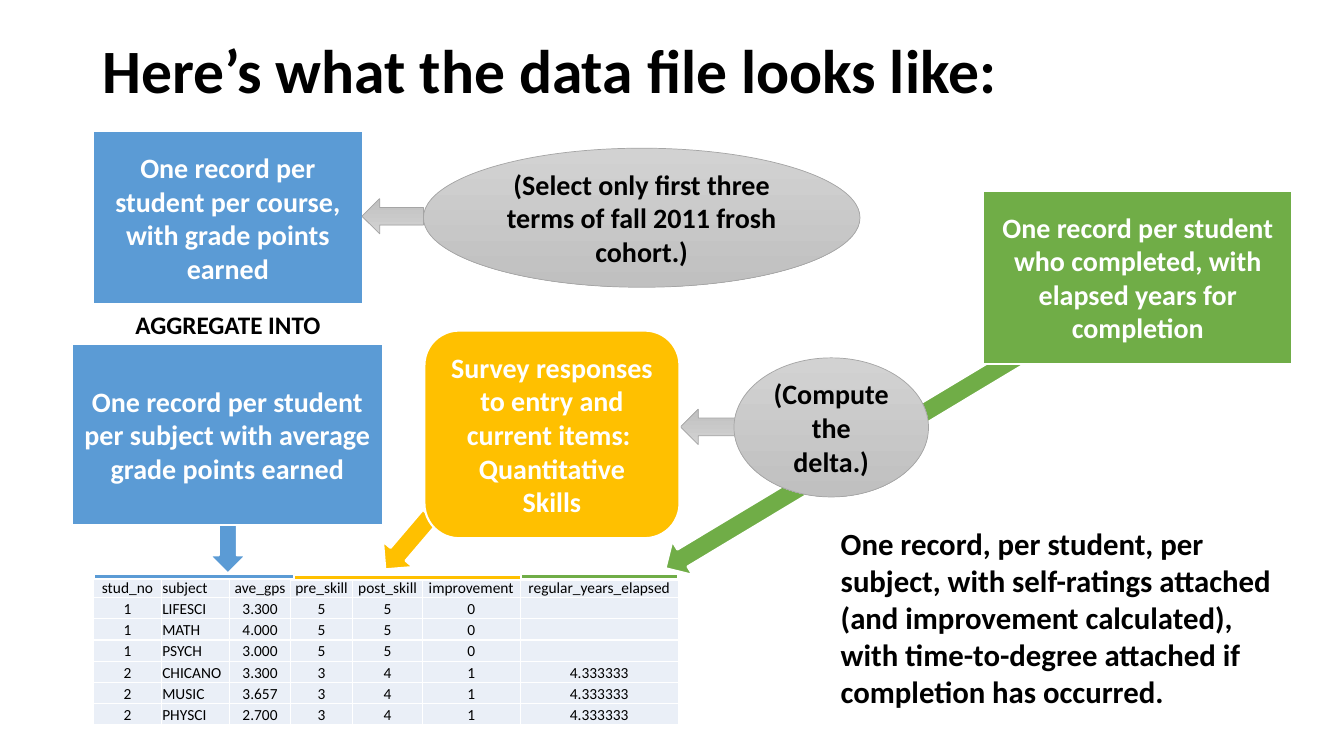
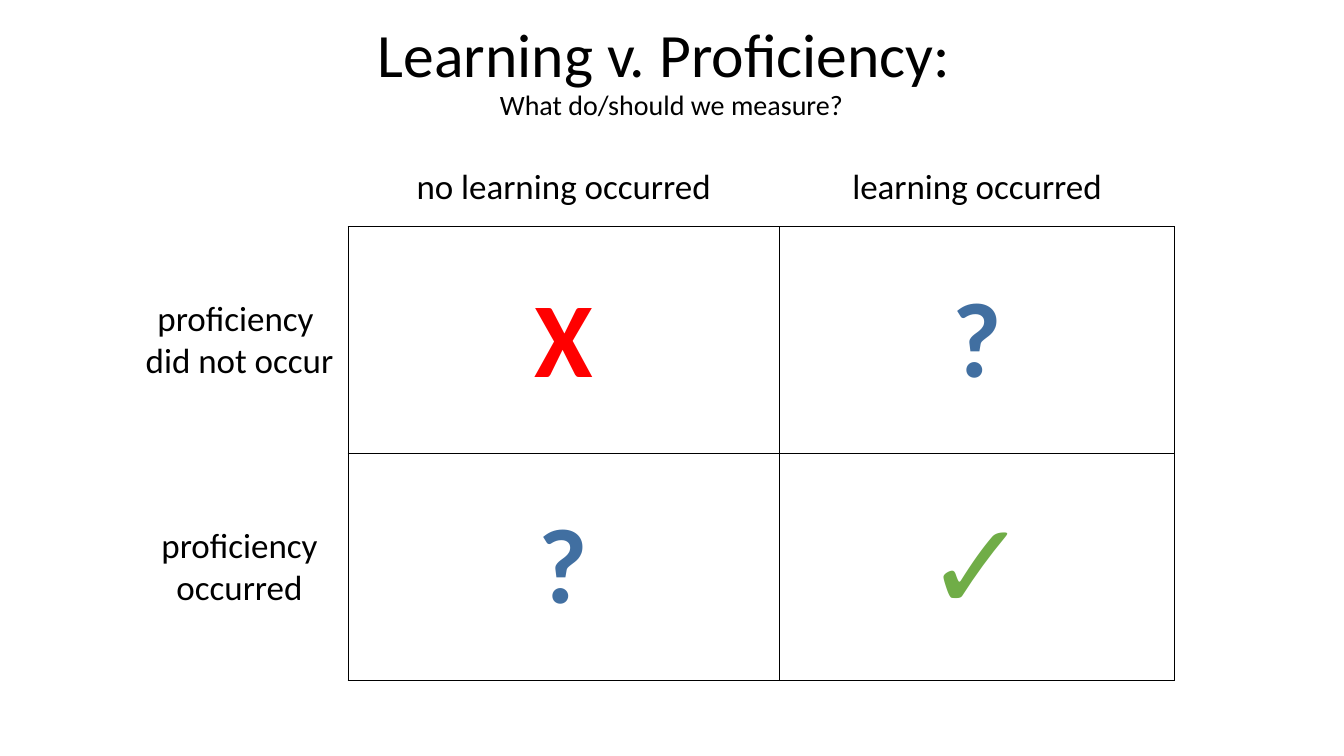
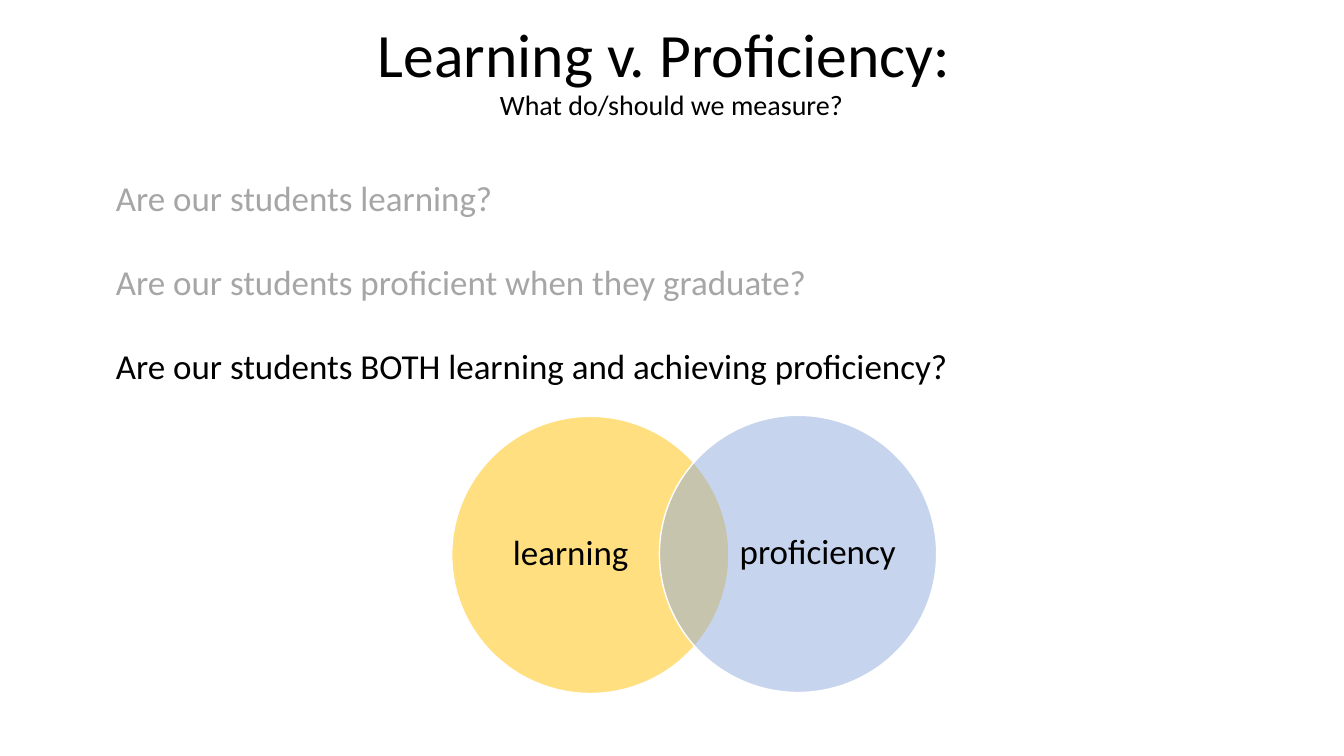
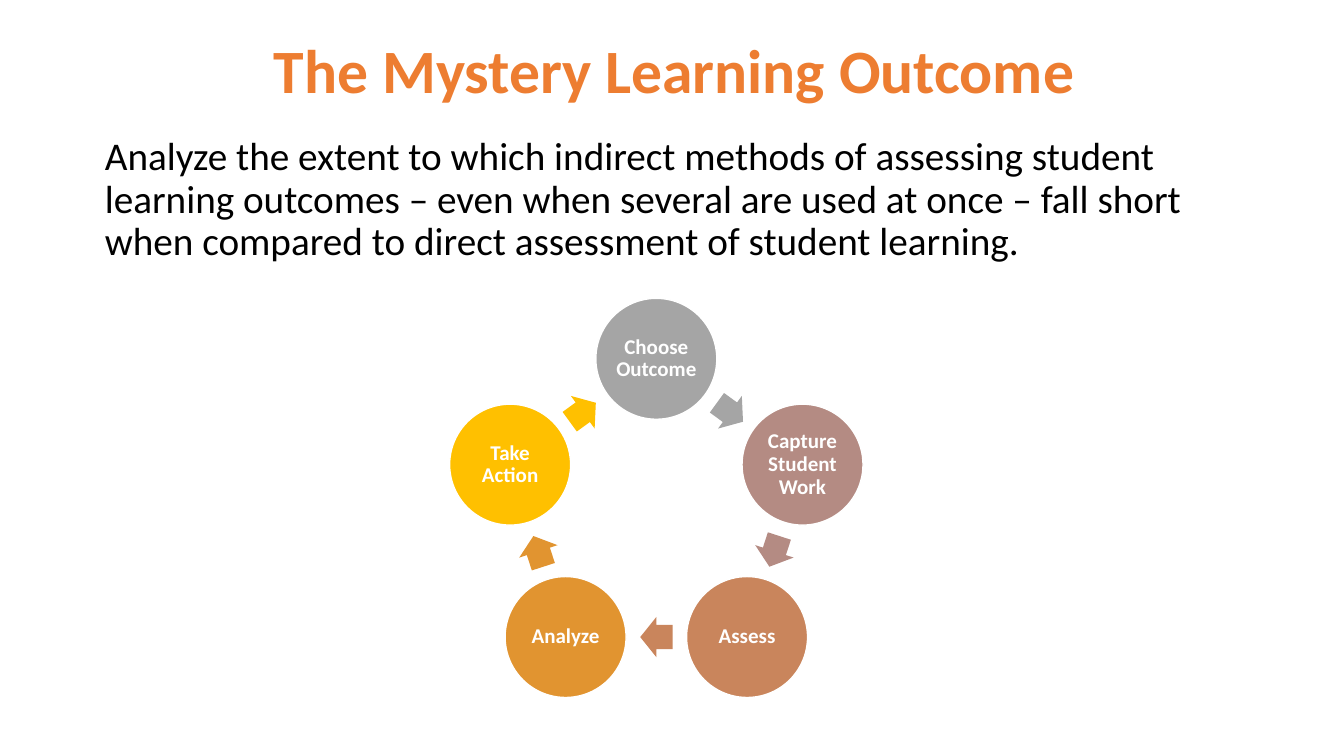
import math
from dataclasses import dataclass

from lxml import etree
from pptx import Presentation
from pptx import util as u
from pptx.dml.color import RGBColor
from pptx.enum import shapes, text
from pptx.oxml.ns import qn

PX = 9144  # one px is a hundredth of an inch
SHAPE = shapes.MSO_SHAPE
ALIGN = {"l": text.PP_ALIGN.LEFT, "c": text.PP_ALIGN.CENTER}
ANCHOR = {"t": text.MSO_ANCHOR.TOP, "m": text.MSO_ANCHOR.MIDDLE,
          "b": text.MSO_ANCHOR.BOTTOM}
TITLE_ONLY, TITLE_AND_BODY = 5, 1


@dataclass(frozen=True)
class Theme:
    font: str = "Calibri"
    symbol_font: str = "Arial"
    # colours
    ink: str = "000000"
    paper: str = "FFFFFF"
    blue: str = "5B9BD5"
    gold: str = "FFC000"
    green: str = "70AD47"
    orange: str = "ED7D31"
    red: str = "FF0000"
    navy: str = "416FA1"
    pale_blue: str = "8FAADC"
    cell: str = "EAEFF7"
    muted: str = "A6A6A6"
    grey: str = "A5A5A5"
    steel: tuple = ("D2D2D2", "C0C0C0")
    cycle: tuple = ("A5A5A5", "B48B83", "C9855C", "E19430", "FFC000")
    # type sizes
    title: int = 44
    body: int = 28
    question: int = 25
    summary: int = 22
    box: int = 20
    caption: int = 18
    step: int = 15
    data: int = 11
    mark: int = 76
    check: int = 88


T = Theme()


# Basics

def px(*lengths):
    return [u.Emu(round(length * PX)) for length in lengths]


def rgb(colour):
    return RGBColor.from_string(colour)


def style(run, size, color, bold, font):
    run.font.size, run.font.bold, run.font.name = u.Pt(size), bold, font
    run.font.color.rgb = rgb(color)


def write(frame, words, size=T.box, color=T.ink, bold=False, font=T.font,
          align="l", anchor=None, inset=None, spacing=1.0, after=0):
    """Fill a text frame; each line of words becomes a paragraph."""
    if anchor:
        frame.word_wrap = True
        frame.auto_size = text.MSO_AUTO_SIZE.NONE
        frame.vertical_anchor = ANCHOR[anchor]
    if inset is not None:
        frame.margin_left, frame.margin_top, frame.margin_right, frame.margin_bottom = px(*[inset] * 4)
    for i, line in enumerate(words.split("\n")):
        para = frame.add_paragraph() if i else frame.paragraphs[0]
        para.alignment = ALIGN[align]
        para.line_spacing = spacing
        para.space_before, para.space_after = u.Pt(0), u.Pt(after)
        if line:
            run = para.add_run()
            run.text = line
            style(run, size, color, bold, font)
        else:
            etree.SubElement(para._p, qn("a:endParaRPr"), sz=str(size * 100))


def place(shape, box):
    shape.left, shape.top, shape.width, shape.height = px(*box)


# Elements

def titled_slide(deck, words, box, layout=TITLE_ONLY, subtitle=None, **fmt):
    slide = deck.slides.add_slide(deck.slide_layouts[layout])
    heading = slide.shapes.title
    place(heading, box)
    write(heading.text_frame, words, size=T.title, anchor="m", spacing=0.9, **fmt)
    if subtitle:
        para = heading.text_frame.paragraphs[0]
        para.add_line_break()
        run = para.add_run()
        run.text = subtitle
        style(run, T.box, T.ink, False, T.font)
    return slide


def body(slide, words, box, **fmt):
    """Put unbulleted paragraphs in the body placeholder."""
    holder = slide.placeholders[1]
    place(holder, box)
    write(holder.text_frame, words, anchor="t", **fmt)
    for para in holder.text_frame.paragraphs:
        props = para._p.get_or_add_pPr()
        props.set("marL", "0")
        props.set("indent", "0")
        etree.SubElement(props, qn("a:buNone"))
    return holder.text_frame


def label(slide, words, box, **fmt):
    write(slide.shapes.add_textbox(*px(*box)).text_frame, words,
          **{"anchor": "t", **fmt})


def figure(slide, kind, box, fill, line=T.paper, width=1.5, turn=0, alpha=None,
           words=None, **fmt):
    """Draw a preset shape; a pair of colours gives a top-down gradient."""
    shape = slide.shapes.add_shape(kind, *px(*box))
    shape.shadow.inherit = False
    shape.rotation = turn
    if isinstance(fill, tuple):
        shape.fill.gradient()
        shape.fill.gradient_angle = 270
        for stop, colour in zip(shape.fill.gradient_stops, fill):
            stop.color.rgb = rgb(colour)
    else:
        shape.fill.solid()
        shape.fill.fore_color.rgb = rgb(fill)
    if alpha is not None:
        colour = shape._element.spPr.find(qn("a:solidFill")).find(qn("a:srgbClr"))
        etree.SubElement(colour, qn("a:alpha"), val=str(alpha * 1000))
    if line:
        shape.line.color.rgb = rgb(line)
        shape.line.width = u.Pt(width)
    else:
        shape.line.fill.background()
    if words:
        write(shape.text_frame, words, **{"bold": True, "align": "c", "anchor": "m", **fmt})
    return shape


def steel(slide, kind, box, **options):
    figure(slide, kind, box, T.steel, line=T.grey, width=0.5, **options)


def table(slide, left, top, columns, rows):
    frame = slide.shapes.add_table(len(rows), len(columns),
                                   *px(left, top, sum(columns), sum(rows)))
    grid = frame.table
    grid.first_row = grid.horz_banding = False
    for column, size in zip(grid.columns, px(*columns)):
        column.width = size
    for row, size in zip(grid.rows, px(*rows)):
        row.height = size
    return grid


def fill_cell(cell, words, anchor, sides, line, width, fill=None, **fmt):
    """Write a cell and rule the named sides (a string out of LRTB)."""
    cell.margin_left, cell.margin_top, cell.margin_right, cell.margin_bottom = px(1, 1, 1, 0)
    cell.vertical_anchor = ANCHOR[anchor]
    write(cell.text_frame, words, **fmt)
    if fill:
        cell.fill.solid()
        cell.fill.fore_color.rgb = rgb(fill)
    else:
        cell.fill.background()
    props = cell._tc.get_or_add_tcPr()
    for i, side in enumerate(sides):
        edge = etree.Element(qn("a:ln" + side), w=str(u.Pt(width)))
        solid = etree.SubElement(edge, qn("a:solidFill"))
        etree.SubElement(solid, qn("a:srgbClr"), val=line)
        props.insert(i, edge)


# Slides

RECORDS = [
    ("stud_no", "subject", "ave_gps", "pre_skill", "post_skill", "improvement",
     "regular_years_elapsed"),
    ("1", "LIFESCI", "3.300", "5", "5", "0", ""),
    ("1", "MATH", "4.000", "5", "5", "0", ""),
    ("1", "PSYCH", "3.000", "5", "5", "0", ""),
    ("2", "CHICANO", "3.300", "3", "4", "1", "4.333333"),
    ("2", "MUSIC", "3.657", "3", "4", "1", "4.333333"),
    ("2", "PHYSCI", "2.700", "3", "4", "1", "4.333333"),
]


def data_file(deck):
    slide = titled_slide(deck, "Here’s what the data file looks like:",
                         (92, 0, 1150, 145), bold=True)
    figure(slide, SHAPE.RECTANGLE, (92, 130, 268, 172), T.blue, color=T.paper,
           words="One record per student per course, with grade points earned")
    steel(slide, SHAPE.OVAL, (420, 147, 433, 138),
          words="(Select only first three terms of fall 2011 frosh cohort.)")

    # Merged data
    records = table(slide, 93, 572, [67, 68, 60, 62, 69, 97, 157], [21] * len(RECORDS))
    for r, record in enumerate(RECORDS):
        for c, value in enumerate(record):
            fill_cell(records.cell(r, c), value, "b", "LRTB", T.paper, 1, fill=T.cell,
                      size=T.data, align="l" if c == 1 else "c")

    # Sources and the arrows that lead to the data
    label(slide, "AGGREGATE INTO", (92, 302, 268, 40), size=T.caption, bold=True, align="c")
    for left, top in ((359, 197), (675, 406)):
        steel(slide, SHAPE.RIGHT_ARROW, (left, top, 61, 35), turn=180)
    figure(slide, SHAPE.RIGHT_ARROW, (370, 519, 69, 39), T.gold, turn=130.4)
    figure(slide, SHAPE.ROUNDED_RECTANGLE, (421, 328, 253, 206), T.gold, color=T.paper,
           words="Survey responses to entry and current items:  Quantitative\nSkills")
    figure(slide, SHAPE.DOWN_ARROW, (208, 505, 36, 64), T.blue)
    figure(slide, SHAPE.RECTANGLE, (71, 341, 309, 180), T.blue, color=T.paper,
           words="One record per student per subject with average grade points earned")
    figure(slide, SHAPE.RIGHT_ARROW, (627, 425, 463, 39), T.green, turn=149)
    figure(slide, SHAPE.RECTANGLE, (975, 189, 307, 172), T.green, color=T.paper,
           words="One record per student who completed, with elapsed years for completion")
    steel(slide, SHAPE.OVAL, (728, 355, 193, 138), words="(Compute the delta.)")

    # Bars that tie columns to their source
    for box, colour in (((516, 569, 157, 6), T.green), ((289, 570, 228, 5), T.gold),
                        ((93, 569, 199, 5), T.blue)):
        figure(slide, SHAPE.RECTANGLE, box, colour)
    label(slide, "One record, per student, per subject, with self-ratings attached "
          "(and improvement calculated), with time-to-degree attached if completion "
          "has occurred.", (824, 516, 451, 195), size=T.summary, bold=True)


def comparison_slide(deck, layout):
    return titled_slide(deck, "Learning v. Proficiency: ", (45, 0, 1242, 145), layout,
                        subtitle="What do/should we measure?", align="c")


def outcome_matrix(deck):
    slide = comparison_slide(deck, TITLE_ONLY)
    heading = {"size": T.question}
    wrong = {"size": T.mark, "color": T.red, "bold": True}
    unsure = {**wrong, "color": T.navy}
    right = {**wrong, "size": T.check, "color": T.green, "font": T.symbol_font}
    rows = [
        [("", heading), ("no learning occurred", heading), ("learning occurred", heading)],
        [("proficiency \ndid not occur", heading), ("X", wrong), ("?", unsure)],
        [("proficiency occurred", heading), ("?", unsure), ("✓", right)],
    ]
    matrix = table(slide, 130, 146, [215, 428, 392], [79, 225, 225])
    for r, row in enumerate(rows):
        for c, (words, fmt) in enumerate(row):
            if r and c:
                sides = "LRTB"
            else:
                sides = "R" if r else "B" if c else ""
            fill_cell(matrix.cell(r, c), words, "m", sides, T.ink, 0.5, align="c", **fmt)


def overlap(deck):
    slide = comparison_slide(deck, TITLE_AND_BODY)
    questions = body(slide, "Are our students learning?\n"
                     "Are our students proficient when they graduate?\n"
                     "Are our students BOTH learning and achieving proficiency?",
                     (105, 170, 1156, 263), size=T.question, color=T.muted, after=30)
    questions.paragraphs[-1].runs[0].font.color.rgb = rgb(T.ink)
    for words, left, top, label_left, colour in (
            ("learning", 448, 413, 487, T.gold),
            ("proficiency", 654, 412, 732, T.pale_blue)):
        figure(slide, SHAPE.OVAL, (left, top, 275, 275), colour, width=1, alpha=50)
        label(slide, words, (label_left, top + 32, 158, 210), size=T.question,
              align="c", anchor="m", inset=0, spacing=0.9)


def assessment_cycle(deck):
    slide = titled_slide(deck, "The Mystery Learning Outcome", (94, 0, 1150, 145),
                         TITLE_AND_BODY, color=T.orange, bold=True, align="c")
    body(slide, "Analyze the extent to which indirect methods of assessing student "
         "learning outcomes – even when several are used at once – fall short when "
         "compared to direct assessment of student learning.",
         (94, 131, 1150, 145), size=T.body, spacing=0.9)

    # Steps on a ring, each followed by an arrow halfway to the next
    steps = ("Choose Outcome", "Capture Student Work", "Assess", "Analyze", "Take Action")
    turn, radius = 360 / len(steps), 152.5

    def on_ring(degrees, distance, width, height):
        angle = math.radians(degrees)
        return (round(651 + distance * math.sin(angle) - width / 2),
                round(508.5 - distance * math.cos(angle) - height / 2), width, height)

    for i, (step, colour) in enumerate(zip(steps, T.cycle)):
        figure(slide, SHAPE.OVAL, on_ring(i * turn, radius, 120, 120), colour, width=1,
               words=step, size=T.step, color=T.paper, inset=0, spacing=0.9)
        halfway = (i + 0.5) * turn
        arrow = figure(slide, SHAPE.RIGHT_ARROW,
                       on_ring(halfway, radius * math.cos(math.radians(turn / 2)), 32, 40),
                       colour, line=None, turn=halfway)
        arrow.adjustments[0] = 0.6
        arrow.adjustments[1] = 0.5


def main():
    deck = Presentation()
    deck.slide_width, deck.slide_height = px(1333, 750)
    for build in (data_file, outcome_matrix, overlap, assessment_cycle):
        build(deck)
    deck.save("out.pptx")


if __name__ == "__main__":
    main()
